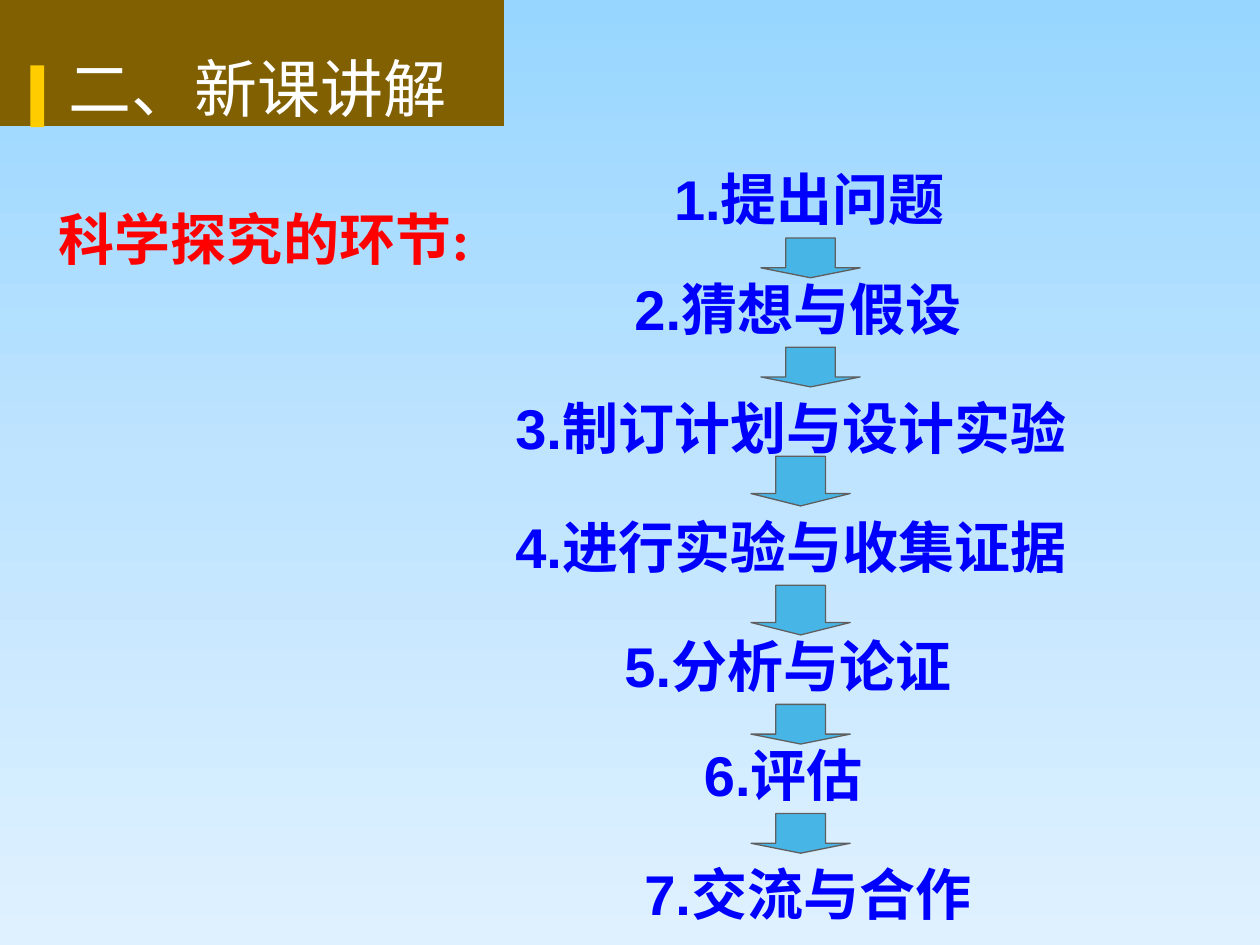
from copy import deepcopy
from dataclasses import dataclass
from math import cos, pi, sin

from pptx import Presentation
from pptx.dml.color import RGBColor
from pptx.enum.shapes import MSO_SHAPE
from pptx.enum.text import MSO_ANCHOR, MSO_AUTO_SIZE, PP_ALIGN
from pptx.oxml.ns import qn
from pptx.util import Emu, Inches, Pt

DOWN_ARROW, RECTANGLE = MSO_SHAPE.DOWN_ARROW, MSO_SHAPE.RECTANGLE
TOP, LEFT = MSO_ANCHOR.TOP, PP_ALIGN.LEFT
FIT_SHAPE, NO_FIT = MSO_AUTO_SIZE.SHAPE_TO_FIT_TEXT, MSO_AUTO_SIZE.NONE

WIDTH, HEIGHT = Inches(10), Inches(7.5)
CELL = WIDTH / 127      # square grid: 127 columns across the slide
COLUMN_SHIFT = -0.3     # the grid starts slightly left of the slide
TEXT_ROWS = 8
ARROW_COLUMNS = 10
TITLE_ONLY = 5


@dataclass(frozen=True)
class Theme:
    sky: tuple = ("97D6FF", "BFE4FF", "DFF1FF")
    band: str = "806000"
    accent: str = "FFCC00"
    title: str = "FFFFFF"
    heading: str = "FF0000"
    step: str = "0000FF"
    arrow: str = "47B6E7"
    arrow_line: str = "5F5F5F"
    title_font: str = "Noto Sans CJK SC"
    heading_font: str = "Times New Roman"
    step_font: str = "Arial"
    title_size: int = 36
    text_size: int = 32


@dataclass(frozen=True)
class Label:
    text: str
    column: int
    row: int
    columns: int


@dataclass(frozen=True)
class Arrow:
    column: int
    row: int
    rows: int


THEME = Theme()
HEADING = Label("科学探究的环节:", 5, 20, 45)
STEPS = (
    Label("1.提出问题", 67, 16, 36),
    Label("2.猜想与假设", 63, 27, 40),
    Label("3.制订计划与设计实验", 51, 39, 63),
    Label("4.进行实验与收集证据", 51, 51, 61),
    Label("5.分析与论证", 62, 63, 40),
    Label("6.评估", 70, 74, 24),
    Label("7.交流与合作", 64, 86, 38),
)
ARROWS = (
    Arrow(77, 24, 4), Arrow(77, 35, 4), Arrow(76, 46, 5),
    Arrow(76, 59, 5), Arrow(76, 71, 4), Arrow(76, 82, 4),
)


def grid(column: float, row: float, columns: float, rows: float) -> list:
    cells = (column + COLUMN_SHIFT, row, columns, rows)
    return [Emu(round(value * CELL)) for value in cells]


def share(left: float, top: float, width: float, height: float) -> list:
    """Turn percentages of the slide into lengths."""
    pairs = zip((left, top, width, height), (WIDTH, HEIGHT) * 2)
    return [Emu(round(value * side / 100)) for value, side in pairs]


def paint(shape, color: str) -> None:
    shape.shadow.inherit = False
    shape.fill.solid()
    shape.fill.fore_color.rgb = RGBColor.from_string(color)
    shape.line.fill.background()


def add_run(paragraph, text: str, font_name: str, size: int, color: str, bold: bool) -> None:
    run = paragraph.add_run()
    run.text = text
    run.font.name = font_name
    run.font.size = Pt(size)
    run.font.bold = bold
    run.font.color.rgb = RGBColor.from_string(color)


def paint_background(slide, colors: tuple) -> None:
    fill = slide.background.fill
    fill.gradient()
    fill.gradient_angle = 270
    stop_list = next(slide.element.iter(qn("a:gsLst")))
    stop_list.insert(1, deepcopy(stop_list[0]))
    for index, (stop, color) in enumerate(zip(fill.gradient_stops, colors)):
        stop.position = index / (len(colors) - 1)
        stop.color.rgb = RGBColor.from_string(color)


def add_band(slide) -> None:
    """Title band whose upper right corner is a quarter ellipse."""
    left, top, right, bottom = -0.03, 0.17, 4.05, 1.01
    radius_x, radius_y, parts = 0.44, 0.27, 24
    corner = [
        (right - radius_x + radius_x * sin(angle), top + radius_y - radius_y * cos(angle))
        for angle in (pi / 2 * part / parts for part in range(parts + 1))
    ]
    builder = slide.shapes.build_freeform(left, top, scale=Inches(1))
    builder.add_line_segments([*corner, (right, bottom), (left, bottom)], close=True)
    paint(builder.convert_to_shape(), THEME.band)


def add_title(slide, text: str) -> None:
    title = slide.shapes.title
    title.left, title.top, title.width, title.height = share(4.4, 5.47, 37.3, 9.6)
    frame = title.text_frame
    frame.vertical_anchor, frame.auto_size, frame.word_wrap = TOP, NO_FIT, True
    paragraph = frame.paragraphs[0]
    paragraph.alignment = LEFT
    paragraph.line_spacing, paragraph.space_before = 0.9, Pt(10)
    add_run(paragraph, text, THEME.title_font, THEME.title_size, THEME.title, False)


def add_label(slide, label: Label, font_name: str, color: str, wrap: bool = True) -> None:
    box = slide.shapes.add_textbox(*grid(label.column, label.row, label.columns, TEXT_ROWS))
    frame = box.text_frame
    frame.word_wrap, frame.auto_size = wrap, FIT_SHAPE
    add_run(frame.paragraphs[0], label.text, font_name, THEME.text_size, color, True)


def add_arrow(slide, arrow: Arrow) -> None:
    place = grid(arrow.column, arrow.row, ARROW_COLUMNS, arrow.rows)
    shape = slide.shapes.add_shape(DOWN_ARROW, *place)
    shape.adjustments[0], shape.adjustments[1] = 0.5, 0.25
    paint(shape, THEME.arrow)
    shape.line.color.rgb = RGBColor.from_string(THEME.arrow_line)
    shape.line.width = Pt(0.75)


def main() -> None:
    presentation = Presentation()
    presentation.slide_width, presentation.slide_height = WIDTH, HEIGHT
    slide = presentation.slides.add_slide(presentation.slide_layouts[TITLE_ONLY])
    paint_background(slide, THEME.sky)

    # Title band, with the title brought in front of it
    add_band(slide)
    paint(slide.shapes.add_shape(RECTANGLE, *share(2.4, 6.93, 1.1, 6.53)), THEME.accent)
    add_title(slide, "二、新课讲解")
    slide.shapes.element.append(slide.shapes.title.element)

    # Steps of the inquiry and the arrows between them
    add_label(slide, HEADING, THEME.heading_font, THEME.heading, wrap=False)
    for step in STEPS:
        add_label(slide, step, THEME.step_font, THEME.step)
    for arrow in ARROWS:
        add_arrow(slide, arrow)

    presentation.save("out.pptx")


if __name__ == "__main__":
    main()
